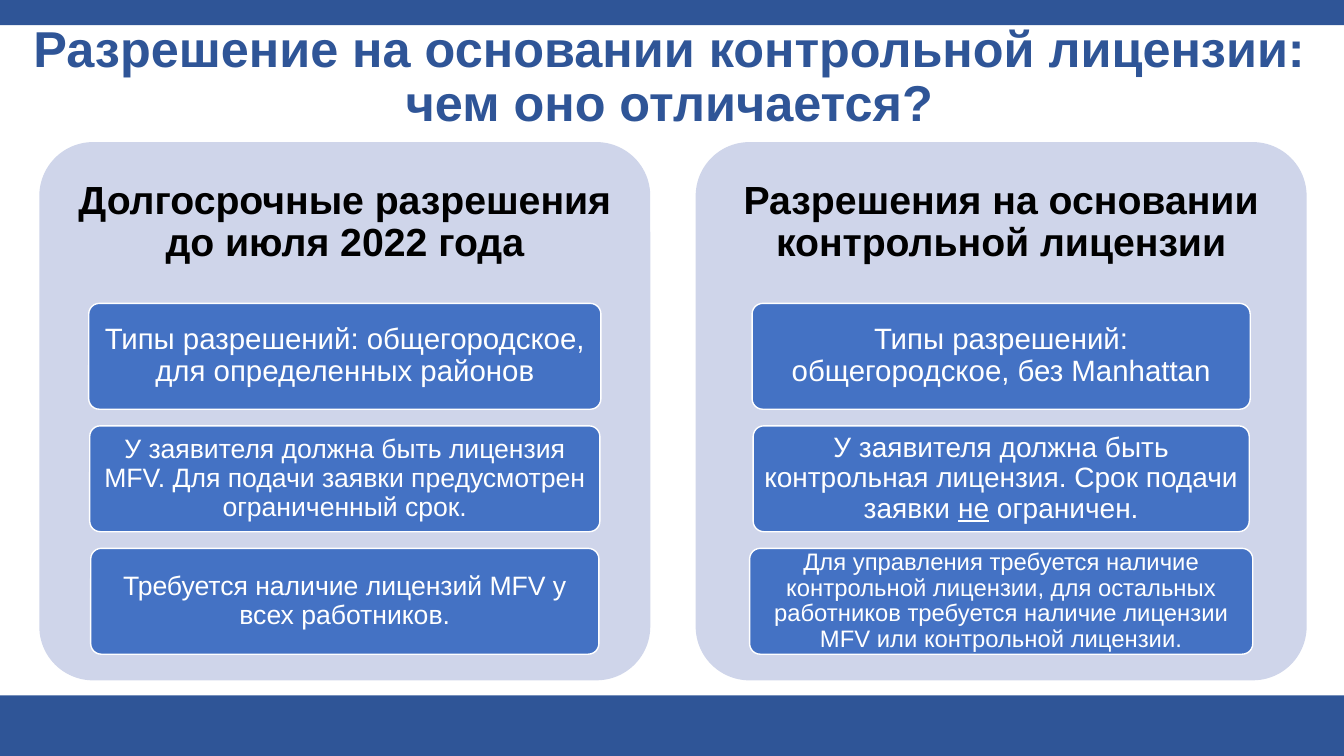
from pptx import Presentation
from pptx.dml.color import RGBColor
from pptx.enum.shapes import MSO_SHAPE
from pptx.enum.text import MSO_ANCHOR, PP_ALIGN
from pptx.util import Inches, Pt

RECTANGLE = MSO_SHAPE.RECTANGLE
ROUNDED = MSO_SHAPE.ROUNDED_RECTANGLE
MIDDLE = MSO_ANCHOR.MIDDLE
CENTER = PP_ALIGN.CENTER

NAVY, BLUE, PALE = "2F5597", "4472C4", "CFD5EA"
WHITE, BLACK = "FFFFFF", "000000"

SLIDE_WIDTH, SLIDE_HEIGHT = 13.33, 7.5
PANEL_TOP, PANEL_WIDTH, PANEL_HEIGHT = 1.41, 6.06, 5.34
HEADING_HEIGHT = 1.6
CARD_TOP, CARD_HEIGHT, CARD_STEP = 3.01, 1.05, 1.215

# Each panel: left, heading, cards; each card: width, text size, side inset, spans.
# Every second span of a card is underlined.
PANELS = [
    (0.39, "Долгосрочные разрешения до июля 2022 года", [
        (5.08, 21, 0.06, ["Типы разрешений: общегородское, для определенных районов"]),
        (5.06, 19, 0.05, ["У заявителя должна быть лицензия MFV. Для подачи заявки "
                          "предусмотрен ограниченный срок."]),
        (5.04, 19, 0.05, ["Требуется наличие лицензий MFV у всех работников."]),
    ]),
    (6.9, "Разрешения на основании контрольной лицензии", [
        (4.94, 21, 0.06, ["Типы разрешений: общегородское, без Manhattan"]),
        (4.92, 20, 0.06, ["У заявителя должна быть контрольная лицензия. Срок подачи заявки ",
                          "не", " ограничен."]),
        (4.99, 17, 0.05, ["Для управления требуется наличие контрольной лицензии, для остальных "
                          "работников требуется наличие лицензии MFV или контрольной лицензии."]),
    ]),
]


def color(value):
    return RGBColor.from_string(value)


class SlideBuilder:
    font = "Arial"
    line_spacing = 0.9

    def __init__(self, page):
        self.page = page

    def shape(self, kind, left, top, width, height, fill, outline=None):
        box = self.page.shapes.add_shape(
            kind, Inches(left), Inches(top), Inches(width), Inches(height))
        box.shadow.inherit = False
        box.fill.solid()
        box.fill.fore_color.rgb = color(fill)
        if kind == ROUNDED:
            box.adjustments[0] = 0.1
        if outline:
            box.line.color.rgb = color(outline)
            box.line.width = Pt(1)
        else:
            box.line.fill.background()
        return box

    def label(self, box, spans, size, ink, bold=False, insets=(0.1, 0.05)):
        """Fill a box with one centred paragraph, underlining every second span."""
        frame = box.text_frame
        frame.word_wrap = True
        frame.vertical_anchor = MIDDLE
        frame.margin_left = frame.margin_right = Inches(insets[0])
        frame.margin_top = frame.margin_bottom = Inches(insets[1])
        para = frame.paragraphs[0]
        para.alignment = CENTER
        para.line_spacing = self.line_spacing
        for index, text in enumerate(spans):
            span = para.add_run()
            span.text = text
            span.font.name = self.font
            span.font.size = Pt(size)
            span.font.bold = bold
            span.font.color.rgb = color(ink)
            if index % 2:
                span.font.underline = True

    def heading(self, left, top, width, height, text, size, ink, insets=(0.1, 0.05)):
        box = self.page.shapes.add_textbox(
            Inches(left), Inches(top), Inches(width), Inches(height))
        self.label(box, [text], size, ink, True, insets)

    def panel(self, left, title, cards):
        self.shape(ROUNDED, left, PANEL_TOP, PANEL_WIDTH, PANEL_HEIGHT, PALE)
        self.heading(left, PANEL_TOP, PANEL_WIDTH, HEADING_HEIGHT, title, 28, BLACK, (0.12, 0.12))
        for row, (width, size, inset, spans) in enumerate(cards):
            card_left = left + (PANEL_WIDTH - width) / 2
            card = self.shape(ROUNDED, card_left, CARD_TOP + row * CARD_STEP,
                              width, CARD_HEIGHT, BLUE, WHITE)
            self.label(card, spans, size, WHITE, insets=(inset, 0.04))


def main():
    deck = Presentation()
    deck.slide_width = Inches(SLIDE_WIDTH)
    deck.slide_height = Inches(SLIDE_HEIGHT)
    builder = SlideBuilder(deck.slides.add_slide(deck.slide_layouts[6]))

    for top, height in [(0, 0.25), (6.9, 0.6)]:
        builder.shape(RECTANGLE, 0, top, SLIDE_WIDTH, height, NAVY)
    builder.heading(-0.13, 0.4, 13.54, 0.75,
                    "Разрешение на основании контрольной лицензии: чем оно отличается?",
                    36, NAVY)
    for left, title, cards in PANELS:
        builder.panel(left, title, cards)
    deck.save("out.pptx")


if __name__ == "__main__":
    main()
